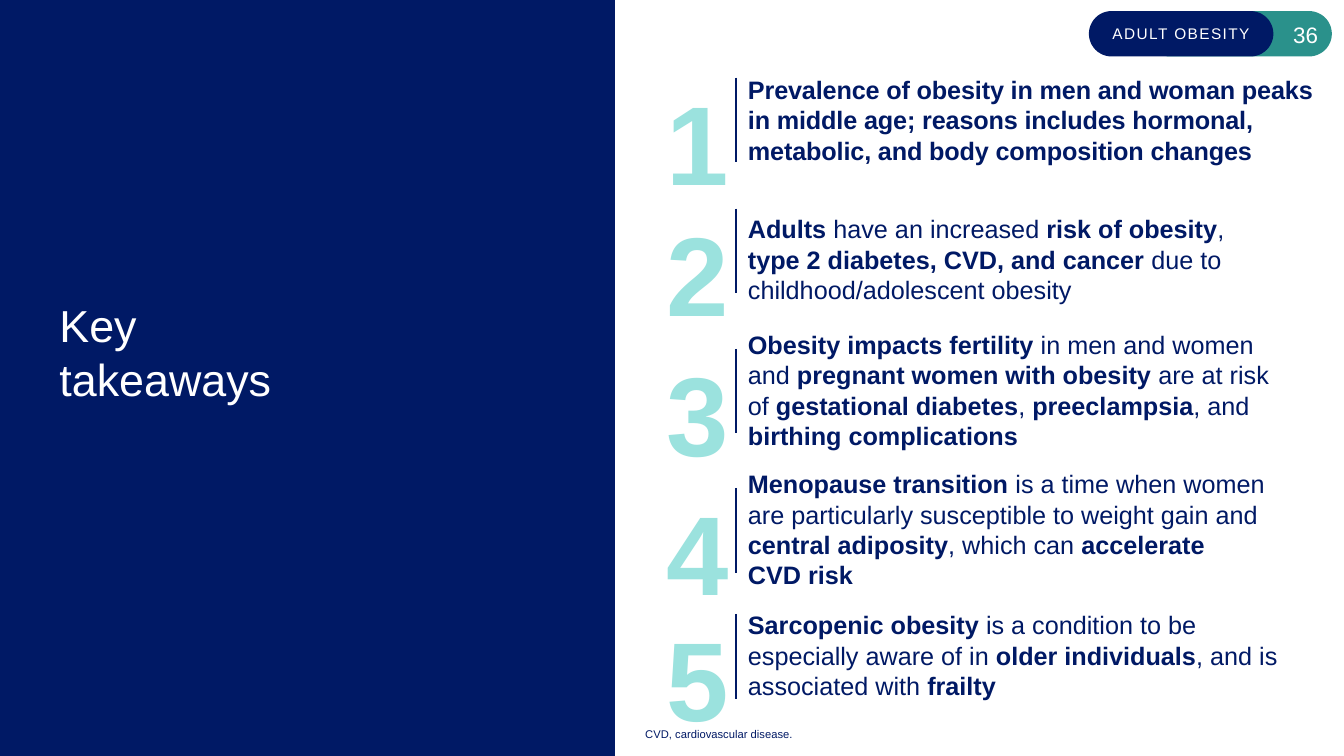
from dataclasses import dataclass

from lxml import etree
from pptx import Presentation
from pptx.dml.color import RGBColor
from pptx.enum.shapes import MSO_CONNECTOR, MSO_SHAPE
from pptx.enum.text import MSO_ANCHOR as Anchor, MSO_AUTO_SIZE as AutoSize, PP_ALIGN as Align
from pptx.oxml.ns import qn
from pptx.util import Inches, Pt


@dataclass(frozen=True)
class Theme:
    font: str = "Arial"
    navy: str = "001965"
    teal: str = "2A918B"
    mint: str = "9BE2DE"
    white: str = "FFFFFF"
    title_size: int = 32
    number_size: int = 80
    body_size: int = 18
    page_size: int = 16
    label_size: int = 11
    note_size: int = 8


DEFAULT_INSETS = (0.1, 0.05, 0.1, 0.05)
NO_INSETS = (0, 0, 0, 0)


class SlideBuilder:
    def __init__(self, slide, theme):
        self.slide = slide
        self.theme = theme

    def panel(self, kind, box, color):
        shape = self.slide.shapes.add_shape(kind, *map(Inches, box))
        shape.shadow.inherit = False
        shape.fill.solid()
        shape.fill.fore_color.rgb = RGBColor.from_string(color)
        shape.line.fill.background()
        return shape

    def pill(self, box, color):
        shape = self.panel(MSO_SHAPE.ROUNDED_RECTANGLE, box, color)
        shape.adjustments[0] = 0.5
        return shape

    def fill_text(self, shape, text, size, color, align=Align.LEFT, anchor=Anchor.TOP,
                  insets=DEFAULT_INSETS, spacing=0):
        """Fill a shape with one paragraph; *stars* mark bold, \\n breaks the line."""
        frame = shape.text_frame
        frame.word_wrap = True
        frame.vertical_anchor = anchor
        (frame.margin_left, frame.margin_top,
         frame.margin_right, frame.margin_bottom) = map(Inches, insets)
        paragraph = frame.paragraphs[0]
        paragraph.alignment = align
        for index, part in enumerate(text.split("*")):
            for line_index, line in enumerate(part.split("\n")):
                if line_index:
                    paragraph.add_line_break()
                if line:
                    run = paragraph.add_run()
                    run.text = line
                    run.font.bold = index % 2 == 1
        for run in paragraph.runs:
            run.font.name = self.theme.font
            run.font.size = Pt(size)
            run.font.color.rgb = RGBColor.from_string(color)
            if spacing:
                run.font._element.set("spc", str(round(spacing * 100)))
        # Line breaks take the run size so that every line has equal height.
        for line_break in paragraph._p.findall(qn("a:br")):
            etree.SubElement(line_break, qn("a:rPr")).set("sz", str(size * 100))

    def text(self, box, text, size, color, shapes=None, **style):
        shapes = shapes or self.slide.shapes
        text_box = shapes.add_textbox(*map(Inches, box))
        self.fill_text(text_box, text, size, color, **style)
        return text_box

    def rule(self, shapes, x, top, length):
        line = shapes.add_connector(
            MSO_CONNECTOR.STRAIGHT, *map(Inches, (x, top, x, top + length)))
        line.line.color.rgb = RGBColor.from_string(self.theme.navy)
        line.line.width = Pt(1)
        etree.SubElement(line._element.spPr, qn("a:effectLst"))

    def takeaway(self, number, rule_top, text_box, text, spacing):
        """Group a large number, a vertical rule and the message beside them."""
        theme = self.theme
        shapes = self.slide.shapes.add_group_shape().shapes
        digit = self.text((6.61, rule_top - 0.31, 0.62, 1.47), f"*{number}*",
                          theme.number_size, theme.mint, shapes=shapes, insets=NO_INSETS)
        digit.text_frame.word_wrap = False
        digit.text_frame.auto_size = AutoSize.SHAPE_TO_FIT_TEXT
        digit.text_frame.paragraphs[0].line_spacing = 1.2
        message = self.text(text_box, text, theme.body_size, theme.navy, shapes=shapes,
                            spacing=spacing)
        message.text_frame.auto_size = AutoSize.SHAPE_TO_FIT_TEXT
        self.rule(shapes, 7.3, rule_top, 0.84)


# Rule top, text top, text width, text height, character spacing, message
TAKEAWAYS = [
    (0.77, 0.69, 5.85, 1.01, -0.1,
     "*Prevalence of obesity in men and woman peaks in middle age; reasons includes "
     "hormonal, metabolic, and body composition changes*"),
    (2.07, 2.07, 5.56, 1.01, 0,
     "*Adults *have an increased *risk of obesity*, \n"
     "*type 2 diabetes, CVD, and cancer *due to childhood/adolescent obesity"),
    (3.46, 3.22, 5.56, 1.31, 0,
     "*Obesity impacts fertility *in men and women and *pregnant women with obesity *"
     "are at risk of *gestational diabetes*,* preeclampsia*, and *birthing complications*"),
    (4.84, 4.6, 5.56, 1.31, 0,
     "*Menopause transition *is a time when women are particularly susceptible to weight "
     "gain and *central adiposity*, which can *accelerate \nCVD risk*"),
    (6.09, 6, 5.56, 1.01, 0,
     "*Sarcopenic obesity *is a condition to be especially aware of in "
     "*older individuals*, and is associated with *frailty*"),
]


def main():
    presentation = Presentation()
    presentation.slide_width = Inches(13.33)
    presentation.slide_height = Inches(7.5)
    theme = Theme()
    builder = SlideBuilder(
        presentation.slides.add_slide(presentation.slide_layouts[6]), theme)

    builder.panel(MSO_SHAPE.RECTANGLE, (0, 0, 6.1, 7.5), theme.navy)
    builder.pill((11.38, 0.11, 1.83, 0.45), theme.teal)
    section = builder.pill((10.8, 0.11, 1.83, 0.45), theme.navy)
    builder.fill_text(section, "ADULT OBESITY", theme.label_size, theme.white,
                      align=Align.CENTER, anchor=Anchor.MIDDLE,
                      insets=(0.08, 0.04, 0.08, 0.04), spacing=1)
    builder.text((0.59, 0.45, 5.06, 6.08), "Key \ntakeaways", theme.title_size,
                 theme.white, anchor=Anchor.MIDDLE, insets=NO_INSETS)

    for number, (rule_top, top, width, height, spacing, text) in enumerate(TAKEAWAYS, 1):
        builder.takeaway(number, rule_top, (7.32, top, width, height), text, spacing)

    footnote = builder.text((6.4, 7, 6.1, 0.35), "CVD, cardiovascular disease.",
                            theme.note_size, theme.navy, anchor=Anchor.BOTTOM,
                            insets=NO_INSETS)
    footnote.text_frame.paragraphs[0].space_after = Pt(6)
    builder.text((12.54, 0.14, 0.63, 0.4), "36", theme.page_size, theme.white,
                 align=Align.RIGHT, anchor=Anchor.MIDDLE)
    presentation.save("out.pptx")


if __name__ == "__main__":
    main()
